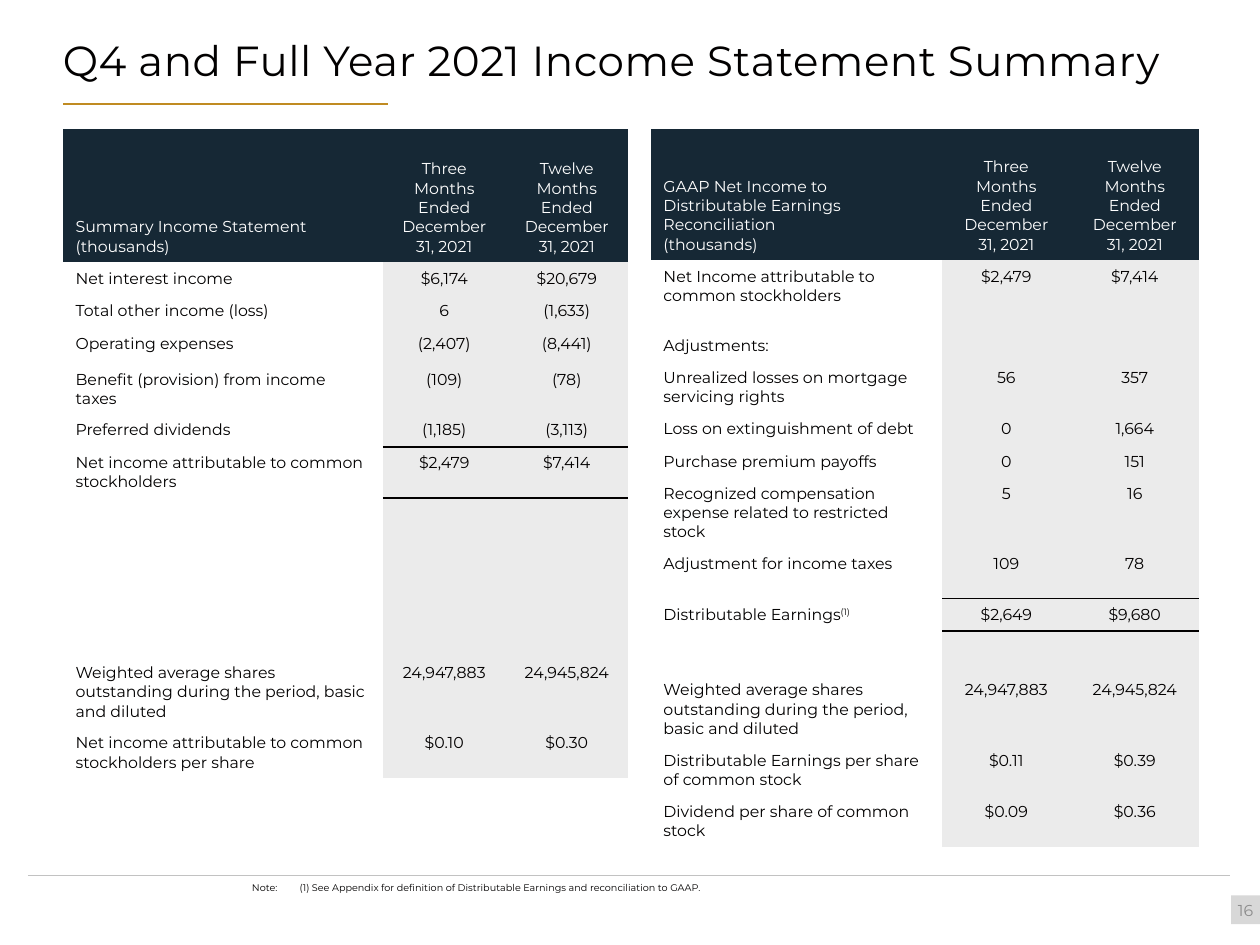
import pptx
import pptx.dml.color
import pptx.enum.shapes
import pptx.enum.text
import pptx.oxml.ns
import pptx.util
from lxml import etree

Cm = pptx.util.Cm
Pt = pptx.util.Pt
RGBColor = pptx.dml.color.RGBColor
Align = pptx.enum.text.PP_ALIGN
Anchor = pptx.enum.text.MSO_ANCHOR
qn = pptx.oxml.ns.qn

FONT = "Montserrat"
BLACK = RGBColor(0x02, 0x00, 0x00)
WHITE = RGBColor(0xFF, 0xFF, 0xFF)
NAVY = RGBColor(0x16, 0x28, 0x35)
GOLD = RGBColor(0xC0, 0x8B, 0x22)
RULE_GREY = RGBColor(0xC2, 0xC2, 0xC2)
CELL_GREY = RGBColor(0xEB, 0xEB, 0xEB)
PAGE_FILL = RGBColor(0xD8, 0xD8, 0xD8)
PAGE_TEXT = RGBColor(0x8C, 0x8C, 0x8C)
NO_GRID_STYLE = "{2D5ABB26-0587-4C30-8999-92F81FD0307C}"

PERIODS = ["Three Months Ended December 31, 2021", "Twelve Months Ended December 31, 2021"]
SHARES = "Weighted average shares outstanding during the period, basic and diluted"
SHARE_COUNTS = ["24,947,883", "24,945,824"]
EMPTY_ROW = (0.64, "", "", "")

INCOME_ROWS = [
    (2.68, "Summary Income Statement\n(thousands)", *PERIODS),
    (0.66, "Net interest income", "$6,174", "$20,679"),
    (0.66, "Total other income (loss)", "6", "(1,633)"),
    (0.72, "Operating expenses", "(2,407)", "(8,441)"),
    (1.02, "Benefit (provision) from income taxes", "(109)", "(78)"),
    (0.66, "Preferred dividends", "(1,185)", "(3,113)"),
    (1.03, "Net income attributable to common stockholders", "$2,479", "$7,414"),
    *[EMPTY_ROW] * 5,
    (1.42, SHARES, *SHARE_COUNTS),
    (1.03, "Net income attributable to common stockholders per share", "$0.10", "$0.30"),
]
EARNINGS_ROWS = [
    (2.64, "GAAP Net Income to Distributable Earnings Reconciliation\n(thousands)", *PERIODS),
    (1.4, "Net Income attributable to common stockholders", "$2,479", "$7,414"),
    (0.64, "Adjustments:", "", ""),
    (1.03, "Unrealized losses on mortgage servicing rights", "56", "357"),
    (0.66, "Loss on extinguishment of debt", "0", "1,664"),
    (0.65, "Purchase premium payoffs", "0", "151"),
    (1.42, "Recognized compensation expense related to restricted stock", "5", "16"),
    (1.02, "Adjustment for income taxes", "109", "78"),
    (0.65, "Distributable Earnings^(1)", "$2,649", "$9,680"),
    (0.87, "", "", ""),
    (1.42, SHARES, *SHARE_COUNTS),
    (1.03, "Distributable Earnings per share of common stock", "$0.11", "$0.39"),
    (1.03, "Dividend per share of common stock", "$0.09", "$0.36"),
]


def add_run(paragraph, text, size, color):
    run = paragraph.add_run()
    run.text = text
    run.font.size = Pt(size)
    run.font.name = FONT
    run.font.color.rgb = color
    return run


def clear_insets(text_frame):
    text_frame.word_wrap = True
    text_frame.margin_left = text_frame.margin_right = 0
    text_frame.margin_top = text_frame.margin_bottom = 0


def add_rule(slide, left, top, width, color, weight):
    rule = slide.shapes.add_connector(
        pptx.enum.shapes.MSO_CONNECTOR.STRAIGHT, Cm(left), Cm(top), Cm(left + width), Cm(top))
    rule.line.color.rgb = color
    rule.line.width = Pt(weight)
    etree.SubElement(rule.element.spPr, qn("a:effectLst"))


def add_title(slide, left, top, width, height):
    box = slide.shapes.add_textbox(Cm(left), Cm(top), Cm(width), Cm(height))
    box.text_frame.word_wrap = True
    box.text_frame.margin_left = 0
    paragraph = box.text_frame.paragraphs[0]
    paragraph.line_spacing = Pt(30)
    run = add_run(paragraph, "Q4 and Full Year 2021 Income Statement Summary", 24, BLACK)
    run.font._element.set("spc", "30")
    add_rule(slide, left, top + 1.57, 6.55, GOLD, 1.5)


def set_border(cell, tag):
    border = etree.Element(qn(tag), w=str(Pt(1)))
    fill = etree.SubElement(border, qn("a:solidFill"))
    etree.SubElement(fill, qn("a:srgbClr"), val=str(BLACK))
    cell._tc.get_or_add_tcPr().insert(0, border)


def fill_cell(cell, text, align, color):
    for index, line in enumerate(text.split("\n")):
        text_frame = cell.text_frame
        paragraph = text_frame.add_paragraph() if index else text_frame.paragraphs[0]
        paragraph.alignment = align
        body, _, superscript = line.partition("^")
        if body:
            add_run(paragraph, body, 9, color)
        else:
            end = etree.SubElement(paragraph._p, qn("a:endParaRPr"), sz="900")
            etree.SubElement(end, qn("a:latin"), typeface=FONT)
        if superscript:
            run = add_run(paragraph, superscript, 9, color)
            run.font._element.set("baseline", "30000")


def add_statement(slide, left, top, column_widths, rows, total_row):
    height = sum(row[0] for row in rows)
    frame = slide.shapes.add_table(
        len(rows), len(column_widths), Cm(left), Cm(top), Cm(sum(column_widths)), Cm(height))
    table = frame.table
    table.first_row = table.horz_banding = False
    table._tbl.tblPr.find(qn("a:tableStyleId")).text = NO_GRID_STYLE
    for column, width in zip(table.columns, column_widths):
        column.width = Cm(width)
    for row_index, (row_height, *texts) in enumerate(rows):
        table.rows[row_index].height = Cm(row_height)
        is_header = row_index == 0
        for column_index, text in enumerate(texts):
            cell = table.cell(row_index, column_index)
            is_value = column_index > 0
            fill_cell(cell, text, Align.CENTER if is_value else Align.LEFT,
                      WHITE if is_header else BLACK)
            cell.vertical_anchor = Anchor.BOTTOM if is_header else Anchor.TOP
            if is_header or is_value:
                cell.fill.solid()
                cell.fill.fore_color.rgb = NAVY if is_header else CELL_GREY
            else:
                cell.fill.background()
            if is_value and row_index == total_row - 1:
                set_border(cell, "a:lnB")
            if is_value and row_index == total_row:
                set_border(cell, "a:lnT")


def add_footer(slide, left, top, width):
    add_rule(slide, left, top, width, RULE_GREY, 0.5)
    note = slide.shapes.add_textbox(Cm(left + 4.52), Cm(top + 0.13), Cm(19.33), Cm(0.48))
    clear_insets(note.text_frame)
    paragraph = note.text_frame.paragraphs[0]
    properties = paragraph._p.get_or_add_pPr()
    properties.set("marL", str(Cm(0.96)))
    properties.set("indent", str(-Cm(0.96)))
    add_run(paragraph, "Note:\t(1) See Appendix for definition of Distributable Earnings "
            "and reconciliation to GAAP.", 5.5, BLACK)


def add_page_number(slide, left, top, size):
    badge = slide.shapes.add_shape(
        pptx.enum.shapes.MSO_SHAPE.RECTANGLE, Cm(left), Cm(top), Cm(size), Cm(size))
    badge.shadow.inherit = False
    badge.fill.solid()
    badge.fill.fore_color.rgb = PAGE_FILL
    badge.line.fill.background()
    clear_insets(badge.text_frame)
    badge.text_frame.vertical_anchor = Anchor.MIDDLE
    paragraph = badge.text_frame.paragraphs[0]
    paragraph.alignment = Align.CENTER
    add_run(paragraph, "16", 9, PAGE_TEXT)


def main():
    presentation = pptx.Presentation()
    presentation.slide_width = Cm(25.4)
    presentation.slide_height = Cm(19.05)
    slide = presentation.slides.add_slide(presentation.slide_layouts[6])
    add_title(slide, 1.27, 0.53, 25.37, 2.16)
    add_statement(slide, 1.27, 2.61, [6.45, 2.47, 2.47], INCOME_ROWS, 6)
    add_statement(slide, 13.12, 2.61, [5.87, 2.59, 2.59], EARNINGS_ROWS, 8)
    add_footer(slide, 0.56, 17.65, 24.23)
    add_page_number(slide, 24.82, 18.05, 0.58)
    presentation.save("out.pptx")


if __name__ == "__main__":
    main()
